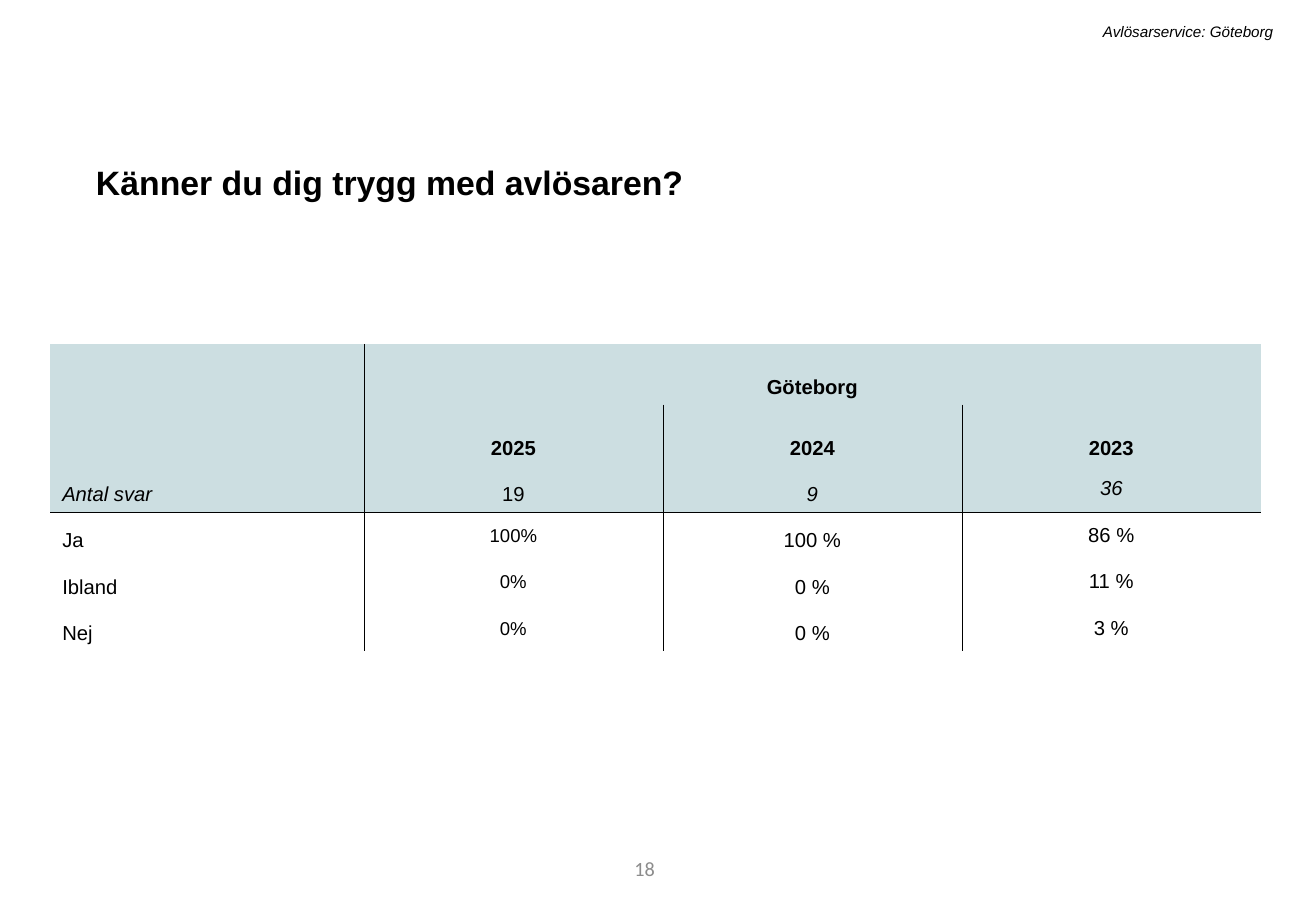
"""Build the survey slide about feeling safe with the relief carer."""
from dataclasses import dataclass, field
from typing import Any

from lxml import etree
from pptx import Presentation
from pptx.dml.color import RGBColor
from pptx.enum.text import MSO_ANCHOR, PP_ALIGN
from pptx.oxml.ns import qn
from pptx.util import Pt

LEFT, MID, RIGHT = PP_ALIGN.LEFT, PP_ALIGN.CENTER, PP_ALIGN.RIGHT
TOP, CENTRE, LOW = MSO_ANCHOR.TOP, MSO_ANCHOR.MIDDLE, MSO_ANCHOR.BOTTOM
BLACK = RGBColor(0x00, 0x00, 0x00)
GREY = RGBColor(0x8C, 0x8C, 0x8C)
TEAL = RGBColor(0xCC, 0xDE, 0xE1)

WIDTHS = (186, 177.2, 177.2, 177.2)
HEIGHTS = (36, 36, 18, 20.2, 20.2, 20.2)
LEADING = 20.3
COUNT = 2
SIDES = ("L", "R", "T", "B")
ROWS = (
    ("", "Göteborg", "", ""),
    ("", "2025", "2024", "2023"),
    ("Antal svar", "19", "9", "36"),
    ("Ja", "100%", "100 %", "86 %"),
    ("Ibland", "0%", "0 %", "11 %"),
    ("Nej", "0%", "0 %", "3 %"),
)


@dataclass
class Style:
    """Text format of one paragraph."""
    size: float = 12
    name: str = "Arial"
    color: RGBColor = BLACK
    align: PP_ALIGN = LEFT
    lead: float | None = None
    marks: dict[str, bool] = field(default_factory=dict)


@dataclass
class Note:
    """A line of text in a box of its own."""
    text: str
    box: tuple[float, float, float, float]
    style: Style
    anchor: MSO_ANCHOR = TOP


TITLE = Note("Känner du dig trygg med avlösaren?", (49.7, 92.2, 676.8, 31.7),
             Style(20, marks={"bold": True}))
NOTES = (
    Note("18", (219.6, 500.4, 175.7, 28.8),
         Style(12, "Calibri", GREY, RIGHT), CENTRE),
    Note("Avlösarservice: Göteborg", (123.8, 9.4, 637.9, 18),
         Style(9, align=RIGHT, marks={"italic": True})),
)


def write(frame: Any, text: str, style: Style) -> None:
    """Put one formatted paragraph in a text frame."""
    para = frame.paragraphs[0]
    para.alignment = style.align
    if style.lead:
        para.line_spacing = Pt(style.lead)
    run = para.add_run()
    run.text = text
    form = {"name": style.name, "size": Pt(style.size),
            "bold": False, "italic": False} | style.marks
    for key, value in form.items():
        setattr(run.font, key, value)
    run.font.color.rgb = style.color


def place(shape: Any, note: Note) -> None:
    """Position a text shape and fill in its note."""
    for key, value in zip(("left", "top", "width", "height"), note.box):
        setattr(shape, key, Pt(value))
    frame = shape.text_frame
    frame.word_wrap = True
    frame.vertical_anchor = note.anchor
    write(frame, note.text, note.style)


def edge(cell: Any, shown: set[str]) -> None:
    """Draw hairlines on the given sides and clear the others."""
    props = cell._tc.get_or_add_tcPr()
    for spot, side in enumerate(SIDES):
        line = etree.Element(qn(f"a:ln{side}"), w=str(Pt(0.25)))
        if side in shown:
            fill = etree.SubElement(line, qn("a:solidFill"))
            etree.SubElement(fill, qn("a:srgbClr"), val=str(BLACK))
        else:
            etree.SubElement(line, qn("a:noFill"))
        props.insert(spot, line)


def sides(row: int, col: int) -> set[str]:
    """Return the ruled sides of a table cell."""
    rules = {
        "L": col == 1 or (col > 1 and row > 0),
        "R": col == 0 or (col < 3 and row > 0),
        "T": row == COUNT + 1,
        "B": row == COUNT,
    }
    return {side for side, drawn in rules.items() if drawn}


def look(row: int, col: int) -> Style:
    """Return the text style of a table cell."""
    return Style(
        size=11 if row > COUNT and col == 1 else 12,
        align=MID if col else LEFT,
        lead=LEADING if row and col < 3 and not (row > COUNT and col == 1) else None,
        marks={"bold": row < COUNT, "italic": row == COUNT and col != 1},
    )


def tabulate(slide: Any) -> None:
    """Add the table of answers."""
    frame = slide.shapes.add_table(len(ROWS), len(WIDTHS), Pt(29.7), Pt(203.9),
                                   Pt(sum(WIDTHS)), Pt(sum(HEIGHTS)))
    table = frame.table
    table.first_row = table.horz_banding = False
    for column, width in zip(table.columns, WIDTHS):
        column.width = Pt(width)
    for line, height in zip(table.rows, HEIGHTS):
        line.height = Pt(height)
    table.cell(0, 1).merge(table.cell(0, 3))
    for row, texts in enumerate(ROWS):
        for col, text in enumerate(texts):
            cell = table.cell(row, col)
            cell.vertical_anchor = LOW if row < COUNT else CENTRE
            if row <= COUNT:
                cell.fill.solid()
                cell.fill.fore_color.rgb = TEAL
            else:
                cell.fill.background()
            if row > COUNT and col == 1:
                cell.margin_left = cell.margin_right = cell.margin_top = Pt(0.72)
                cell.margin_bottom = Pt(0)
            edge(cell, sides(row, col))
            if text:
                write(cell.text_frame, text, look(row, col))


def main() -> None:
    """Build and save the slide."""
    deck = Presentation()
    deck.slide_width, deck.slide_height = Pt(780), Pt(540)
    slide = deck.slides.add_slide(deck.slide_layouts[5])
    place(slide.shapes.title, TITLE)
    tabulate(slide)
    for note in NOTES:
        place(slide.shapes.add_textbox(*map(Pt, note.box)), note)
    deck.save("out.pptx")


if __name__ == "__main__":
    main()
